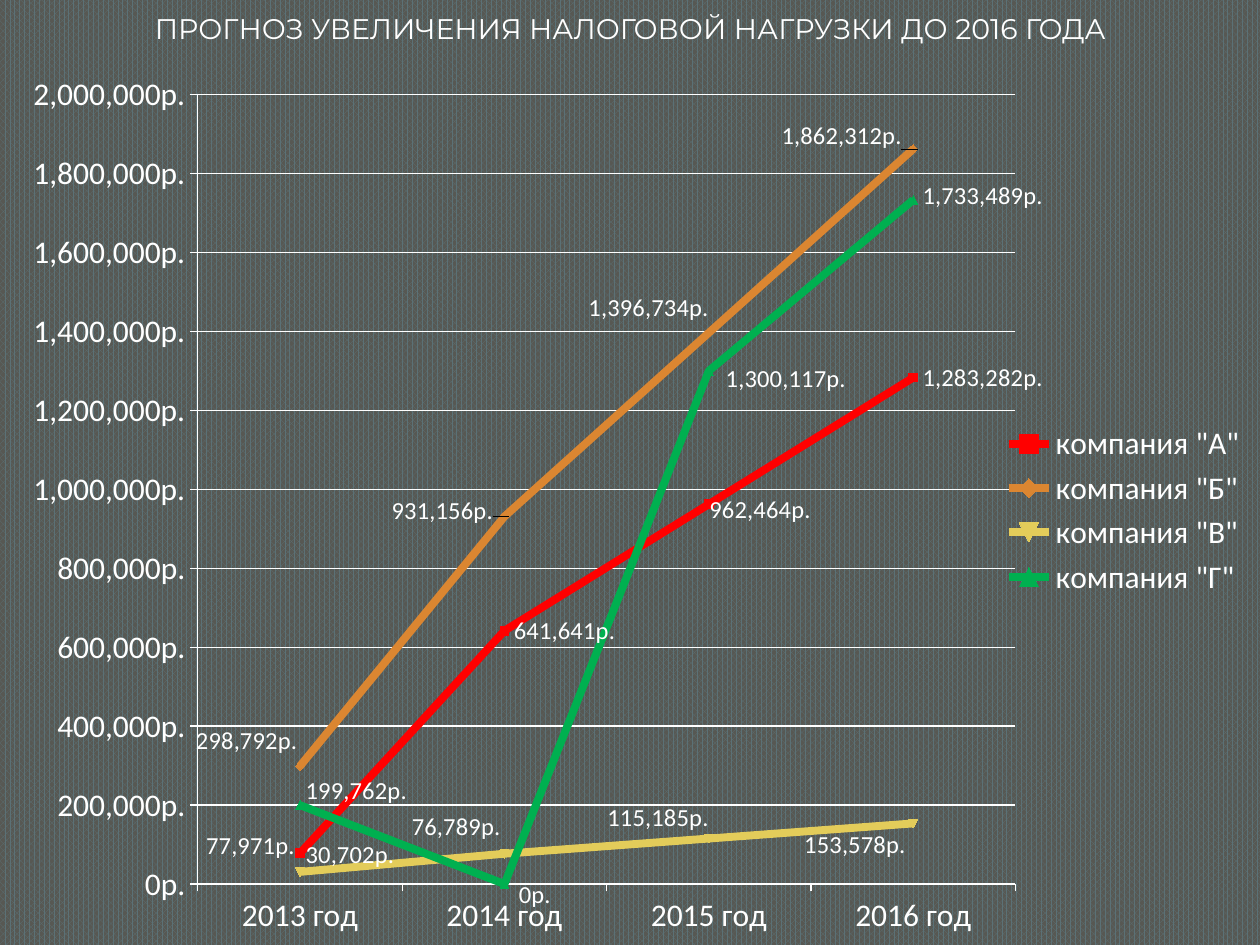
"""Build the slide with the tax burden forecast line chart."""
from dataclasses import dataclass

from lxml.etree import fromstring
from pptx import Presentation
from pptx.chart.data import CategoryChartData
from pptx.dml.color import RGBColor as RGB
from pptx.enum.chart import XL_CHART_TYPE as CT, XL_LABEL_POSITION as LP
from pptx.enum.chart import XL_LEGEND_POSITION as LEG, XL_MARKER_STYLE as MS
from pptx.enum.chart import XL_TICK_MARK as TICK
from pptx.enum.dml import MSO_PATTERN
from pptx.enum.text import MSO_ANCHOR, PP_ALIGN
from pptx.oxml.ns import nsdecls
from pptx.util import Inches, Pt


@dataclass(frozen=True)
class Theme:
    text: RGB = RGB.from_string("FFFFFF")
    pattern_fore: RGB = RGB.from_string("5B7176")
    pattern_back: RGB = RGB.from_string("575853")
    title_font: str = "Montserrat"
    chart_font: str = "Calibri"
    title_size: Pt = Pt(16.2)
    axis_size: Pt = Pt(18)
    label_size: Pt = Pt(14)
    series_line: Pt = Pt(4.5)
    axis_line: Pt = Pt(0.75)


THEME = Theme()
TITLE = "ПРОГНОЗ УВЕЛИЧЕНИЯ НАЛОГОВОЙ НАГРУЗКИ ДО 2016 ГОДА"
ROUBLES = '#,##0"р.";[Red]#,##0"р."'
YEARS = [f"{year} год" for year in range(2013, 2017)]
PLOT_AREA = {"x": 0.157, "y": 0.022, "w": 0.649, "h": 0.908}
# Each company: letter, colour, values, label shifts in percent of the chart
COMPANIES = [
    ("А", "FF0000", (77971, 641641, 962464, 1283282),
     ((-8.2, -0.9), (0, 0), (-0.7, 0.7), (0, 0))),
    ("Б", "DB8631", (298792, 931156, 1396734, 1862312),
     ((-9, -2.9), (-9.7, -0.6), (-10.3, -2.9), (-11.2, -1.5))),
    ("В", "E3CC5A", (30702, 76789, 115185, 153578),
     ((-0.3, -2), (-8.1, -3.1), (-8.8, -2.4), (-9.4, 2.5))),
    ("Г", "00B050", (199762, 0, 1300117, 1733489),
     ((-0.3, -1.7), (0.4, 1.3), (0.6, 0.9), (0, -0.5))),
]


def make_layout(modes, **values):
    """Return a manual chart layout element."""
    parts = [f'<c:{k} val="{v}"/>' for k, v in values.items()]
    return fromstring(f'<c:layout {nsdecls("c")}><c:manualLayout>{modes}'
                      f'{"".join(parts)}</c:manualLayout></c:layout>')


def set_font(font, name, size):
    """Apply a typeface and size in the text colour."""
    font.name, font.size = name, size
    font.color.rgb = THEME.text


def add_title(s):
    """Add the centred heading."""
    sp = s.shapes.add_textbox(Inches(0.04), Inches(0.04), Inches(9.92), Inches(0.56))
    tf = sp.text_frame
    tf.word_wrap = True
    tf.vertical_anchor = MSO_ANCHOR.TOP
    p = tf.paragraphs[0]
    p.text, p.alignment = TITLE, PP_ALIGN.CENTER
    set_font(p.font, THEME.title_font, THEME.title_size)


def style_line(line, color, width):
    """Give a line its colour and width."""
    line.color.rgb, line.width = color, width


def style_axes(chart):
    """Format both axes and the gridlines."""
    for axis in (chart.category_axis, chart.value_axis):
        axis.major_tick_mark, axis.minor_tick_mark = TICK.OUTSIDE, TICK.NONE
        style_line(axis.format.line, THEME.text, THEME.axis_line)
    axis = chart.value_axis
    axis.minimum_scale, axis.maximum_scale, axis.major_unit = 0, 2000000, 200000
    axis.tick_labels.number_format = ROUBLES
    axis.tick_labels.number_format_is_linked = False
    style_line(axis.major_gridlines.format.line, THEME.text, THEME.axis_line)


def add_labels(ser, shifts):
    """Show the value at each point, moved by its shift."""
    labels = ser.data_labels
    labels.show_value, labels.position = True, LP.RIGHT
    labels.number_format, labels.number_format_is_linked = ROUBLES, False
    set_font(labels.font, THEME.chart_font, THEME.label_size)
    for i, (dx, dy) in enumerate(shifts):
        label = ser.points[i].data_label
        label.position = LP.RIGHT
        set_font(label.font, THEME.chart_font, THEME.label_size)
        idx = ser._element.xpath(f"c:dLbls/c:dLbl/c:idx[@val={i}]")[0]
        idx.addnext(fromstring(f'<c:numFmt {nsdecls("c")} sourceLinked="0" '
                               f"formatCode='{ROUBLES}'/>"))
        idx.addnext(make_layout("", x=dx / 100, y=dy / 100))


def style_series(ser, color, shifts):
    """Format one company's line, markers and labels."""
    ser.smooth = False
    style_line(ser.format.line, color, THEME.series_line)
    ser.marker.style, ser.marker.size = MS.AUTOMATIC, 5
    ser.marker.format.fill.solid()
    ser.marker.format.fill.fore_color.rgb = color
    ser.marker.format.line.color.rgb = color
    add_labels(ser, shifts)


def add_forecast_chart(s):
    """Add the line chart of the four companies."""
    data = CategoryChartData(number_format=ROUBLES)
    data.categories = YEARS
    for letter, _, values, _ in COMPANIES:
        data.add_series(f'компания "{letter}"', values)
    chart = s.shapes.add_chart(CT.LINE_MARKERS, Inches(0), Inches(0.6),
                               Inches(10), Inches(6.9), data).chart
    chart.has_title = False
    chart.has_legend = True
    chart.legend.position, chart.legend.include_in_layout = LEG.RIGHT, False
    set_font(chart.font, THEME.chart_font, THEME.axis_size)
    plot = chart.plots[0]
    plot.vary_by_categories = False
    style_axes(chart)
    for ser, (_, color, _, shifts) in zip(plot.series, COMPANIES):
        style_series(ser, RGB.from_string(color), shifts)
    area = chart._chartSpace.chart.plotArea
    for old in area.xpath("c:layout"):
        area.remove(old)
    modes = ('<c:layoutTarget val="inner"/><c:xMode val="edge"/>'
             '<c:yMode val="edge"/>')
    area.insert(0, make_layout(modes, **PLOT_AREA))


def set_background(s):
    """Fill the background with a dotted pattern."""
    fill = s.background.fill
    fill.patterned()
    fill.pattern = MSO_PATTERN.PERCENT_75
    fill.fore_color.rgb = THEME.pattern_fore
    fill.back_color.rgb = THEME.pattern_back


def main():
    """Build and save the presentation."""
    prs = Presentation()
    prs.slide_width, prs.slide_height = Inches(10), Inches(7.5)
    s = prs.slides.add_slide(prs.slide_layouts[6])
    set_background(s)
    add_forecast_chart(s)
    add_title(s)
    prs.save("out.pptx")


if __name__ == "__main__":
    main()
